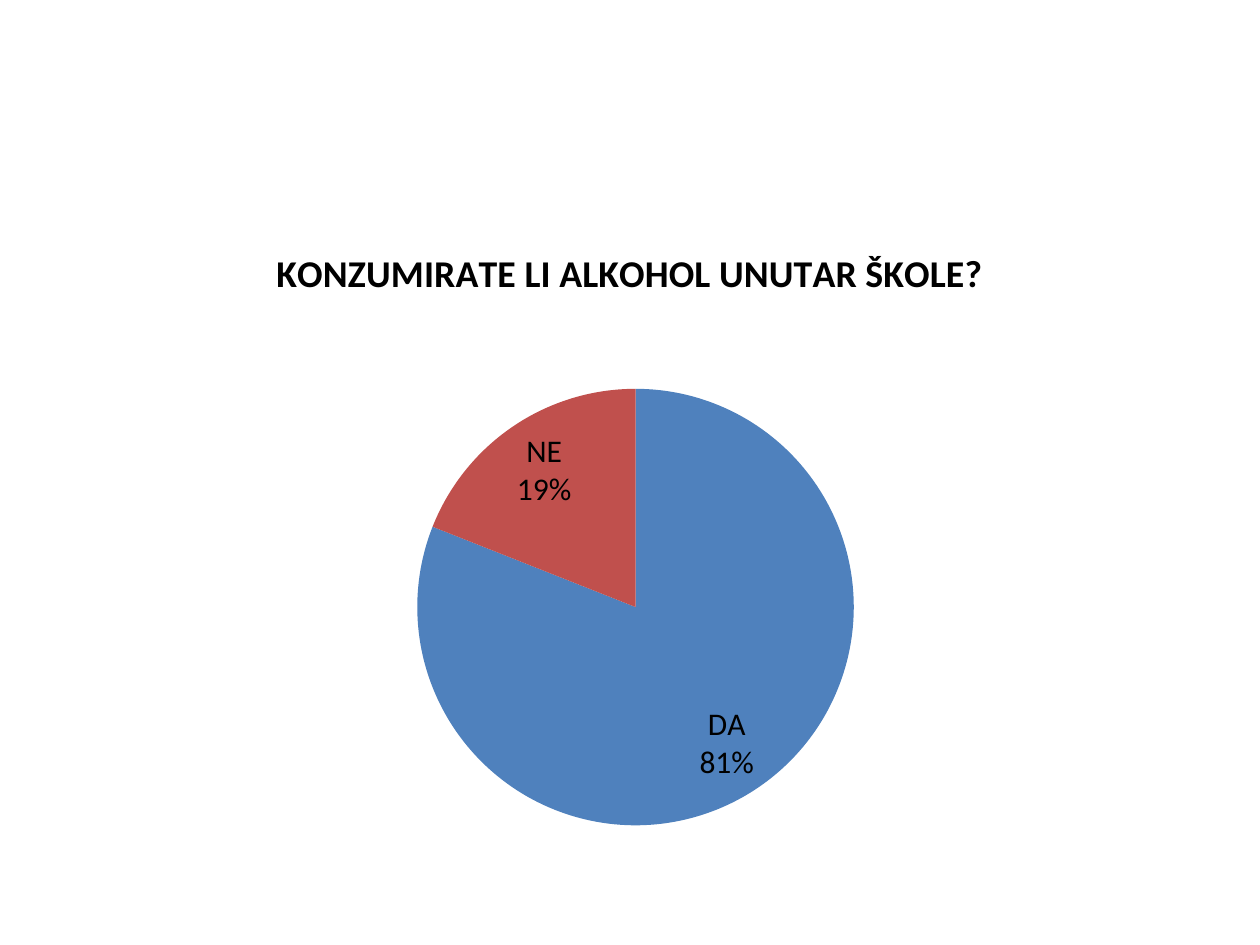
from pptx import Presentation
from pptx.chart.data import CategoryChartData
from pptx.dml.color import RGBColor
from pptx.enum.chart import XL_CHART_TYPE, XL_LABEL_POSITION
from pptx.oxml import parse_xml
from pptx.oxml.ns import nsdecls, qn
from pptx.util import Inches, Pt

BLACK = RGBColor(0x00, 0x00, 0x00)
BLUE = RGBColor(0x4F, 0x81, 0xBD)
RED = RGBColor(0xC0, 0x50, 0x4D)
BLANK_LAYOUT = 6


class SlideBuilder:
    """Holds the style and the current slide; boxes are shares of its size."""

    font = "Calibri"
    label_size = Pt(18)
    title_size = Pt(21.6)

    def __init__(self, prs):
        self.width, self.height = prs.slide_width, prs.slide_height
        self.s = prs.slides.add_slide(prs.slide_layouts[BLANK_LAYOUT])

    def style(self, font, size, bold=False):
        font.name, font.size, font.bold = self.font, size, bold
        font.color.rgb = BLACK

    def pie(self, box, plot_box, title, slices):
        """Add a pie; slices are (category, value, colour) and plot_box is in shares of the chart."""
        categories, values, colours = zip(*slices)
        data = CategoryChartData(number_format="General")
        data.categories = categories
        data.add_series(title, values)
        x, y, w, h = box
        chart = self.s.shapes.add_chart(
            XL_CHART_TYPE.PIE,
            int(x * self.width), int(y * self.height),
            int(w * self.width), int(h * self.height), data).chart
        chart.has_legend = False
        self.style(chart.font, self.label_size)

        chart.has_title = True
        tf = chart.chart_title.text_frame
        tf.text = title
        self.style(tf.paragraphs[0].runs[0].font, self.title_size, bold=True)
        chart.chart_title.include_in_layout = False

        plot = chart.plots[0]
        plot.vary_by_categories = True
        for i, colour in enumerate(colours):
            fill = plot.series[0].points[i].format.fill
            fill.solid()
            fill.fore_color.rgb = colour
        self.label(plot)
        self.place_plot(chart, plot_box)

    def label(self, plot):
        plot.has_data_labels = True
        labels = plot.data_labels
        labels.show_category_name = True
        labels.show_percentage = True
        labels.show_value = False
        labels.number_format = "0%"
        labels.number_format_is_linked = False
        labels.position = XL_LABEL_POSITION.INSIDE_END
        self.style(labels.font, self.label_size)
        separator = parse_xml(f"<c:separator {nsdecls('c')}>\n</c:separator>")
        labels._element.find(qn("c:showBubbleSize")).addnext(separator)

    def place_plot(self, chart, plot_box):
        area = chart._chartSpace.chart.plotArea
        for old in area.findall(qn("c:layout")):
            area.remove(old)
        sizes = "".join(f'<c:{tag} val="{share}"/>' for tag, share in zip("xywh", plot_box))
        area.insert(0, parse_xml(
            f'<c:layout {nsdecls("c")}><c:manualLayout><c:layoutTarget val="inner"/>'
            f'<c:xMode val="edge"/><c:yMode val="edge"/>{sizes}'
            '</c:manualLayout></c:layout>'))


def main():
    prs = Presentation()
    prs.slide_width, prs.slide_height = Inches(10), Inches(7.5)
    slide = SlideBuilder(prs)
    slide.pie(
        box=(0.05, 1.75 / 7.5, 0.9, 0.66),
        plot_box=(0.31, 0.27, 0.39, 0.7),
        title="KONZUMIRATE LI ALKOHOL UNUTAR ŠKOLE?",
        slices=[("DA", 81, BLUE), ("NE", 19, RED)])
    prs.save("out.pptx")


if __name__ == "__main__":
    main()
